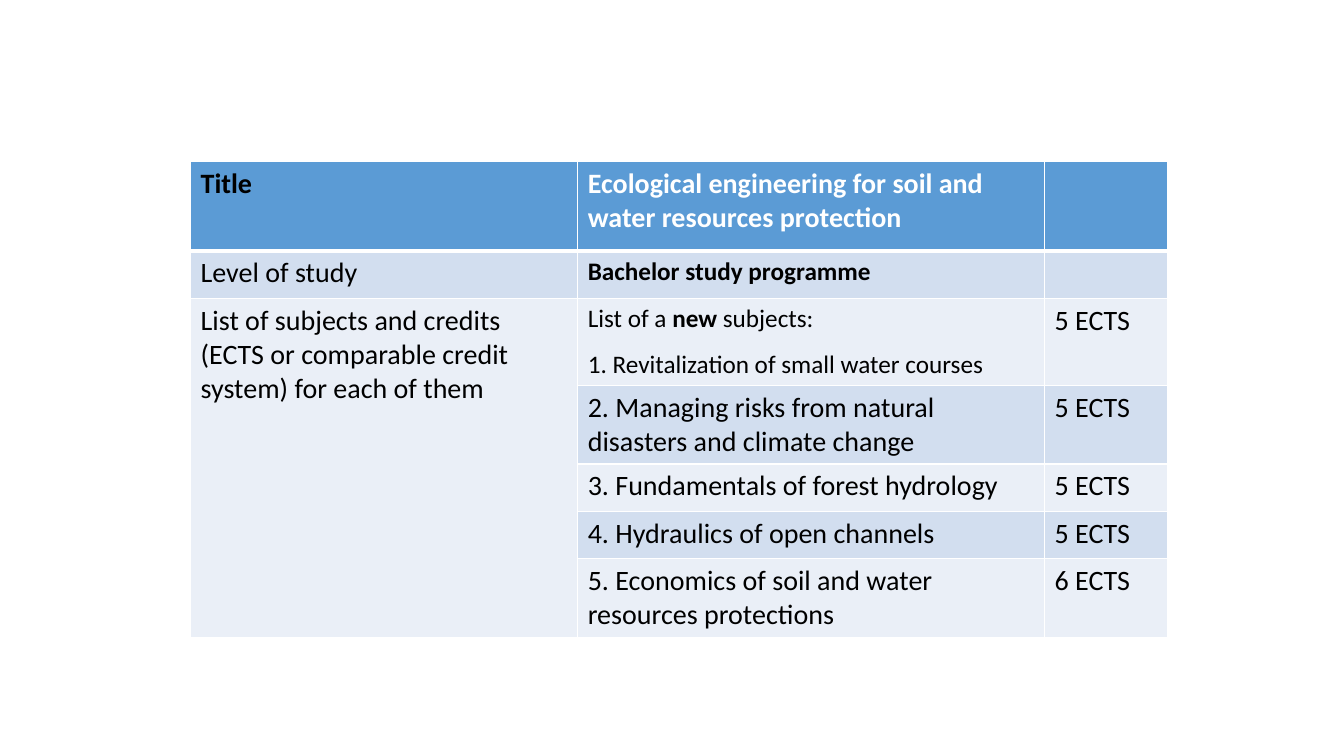
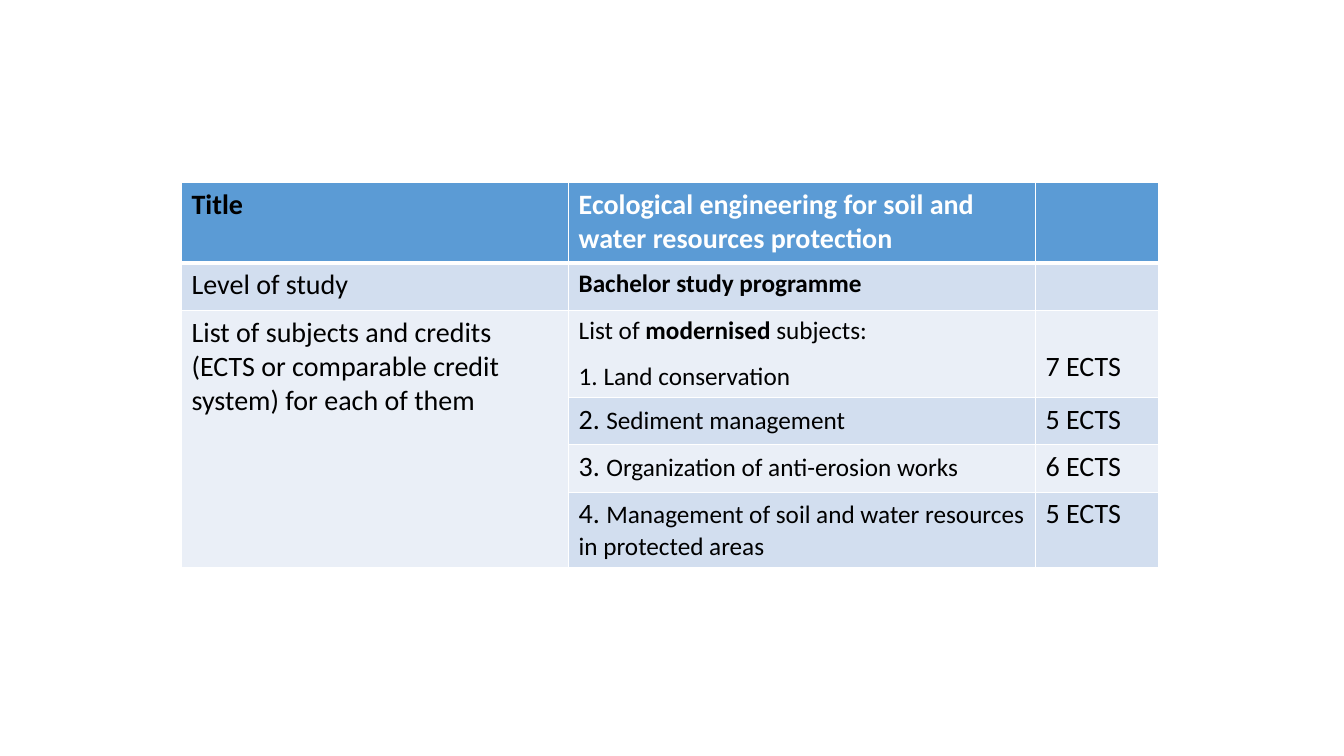
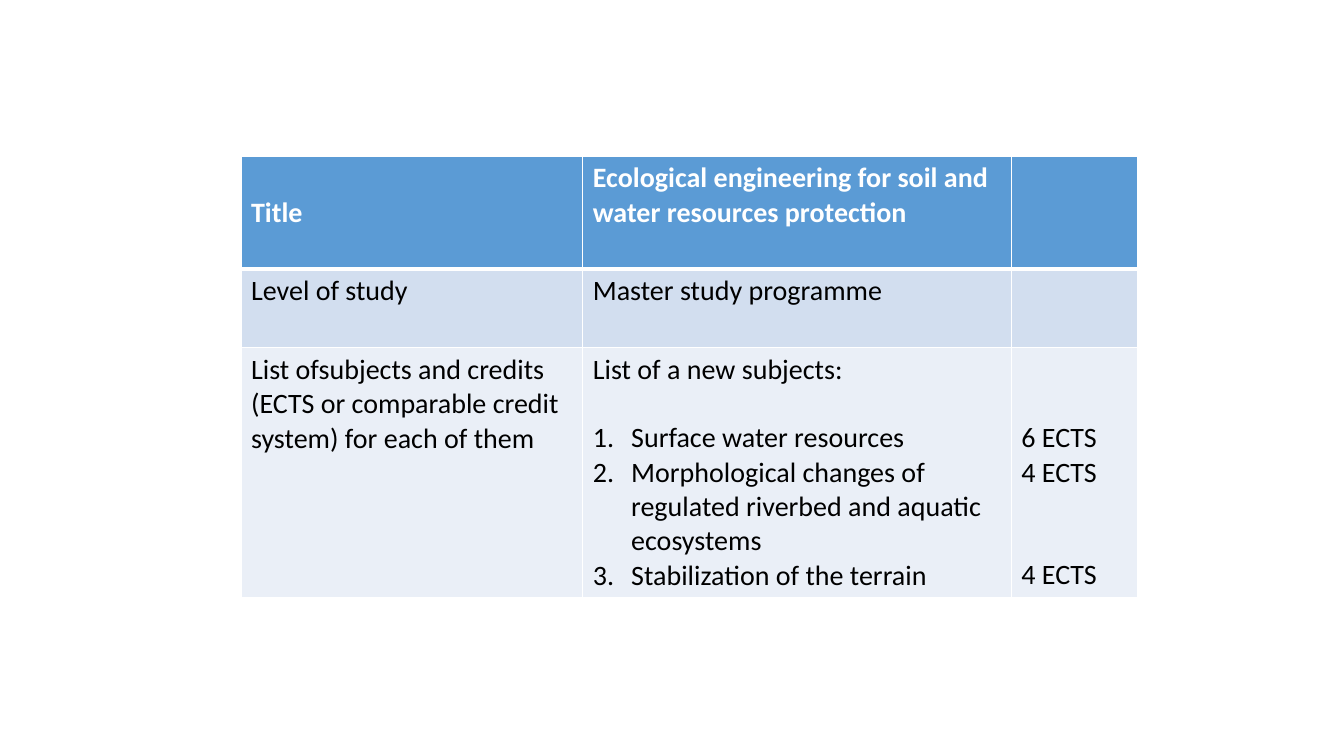
from dataclasses import dataclass
from lxml import etree
from pptx import Presentation
from pptx import util as u
from pptx.dml.color import RGBColor
from pptx.oxml import ns

BLACK = RGBColor(0x00, 0x00, 0x00)
WHITE = RGBColor(0xFF, 0xFF, 0xFF)
HEADER = RGBColor(0x5B, 0x9B, 0xD5)
BANDS = (RGBColor(0xEA, 0xEF, 0xF7), RGBColor(0xD2, 0xDE, 0xEF))

FONT = "Calibri"
BIG, SMALL = 20, 18
LINE = 1.22  # line height as a share of the text size
MARGIN = 0.05
INDENT = 0.38

COURSE = "Ecological engineering for soil and water resources protection"
SUBJECTS = "List of subjects and credits (ECTS or comparable credit system) for each of them"


@dataclass
class Run:
    text: str
    size: int = BIG
    bold: bool = False
    color: RGBColor = BLACK


@dataclass
class Para:
    runs: list
    before: float = 0
    numbered: bool = False


@dataclass
class Cell:
    """Paragraphs that start a number of lines below the top of the cell."""
    paras: list
    drop: int = 0


def plain(text, drop=0, **fmt):
    return Cell([Para([Run(text, **fmt)])], drop)


def ects(*credits, drop=0, gaps=()):
    """Credits, one a line; gaps holds the empty lines above each."""
    gaps = gaps or [0] * len(credits)
    return Cell([Para([Run(f"{n} ECTS")], before=gap * BIG * LINE)
                 for n, gap in zip(credits, gaps)], drop)


def intro(start, key, first_subject):
    """Heading with a bold key word, and the first subject below it."""
    heading = [Run(start, SMALL), Run(key, SMALL, True), Run(" subjects:", SMALL)]
    return Cell([Para(heading), Para([Run(first_subject, SMALL)], before=9 * LINE)])


def item(number, text):
    return Cell([Para([Run(f"{number}. "), Run(text, SMALL)])])


def header(title_color=BLACK, drop=0):
    return [plain("Title", drop, bold=True, color=title_color),
            plain(COURSE, bold=True, color=WHITE), None]


def write(cell, content):
    tf = cell.text_frame
    cell.margin_top = u.Inches(MARGIN + content.drop * BIG * LINE / 72)
    for i, para in enumerate(content.paras):
        p = tf.add_paragraph() if i else tf.paragraphs[0]
        if para.numbered:
            pPr = p._p.get_or_add_pPr()
            pPr.set("marL", str(u.Inches(INDENT)))
            pPr.set("indent", str(-u.Inches(INDENT)))
            etree.SubElement(pPr, ns.qn("a:buFont"), typeface="+mj-lt")
            etree.SubElement(pPr, ns.qn("a:buAutoNum"), type="arabicPeriod")
        if para.before:
            p.space_before = u.Pt(round(para.before, 1))
        for run in para.runs:
            r = p.add_run()
            r.text = run.text
            r.font.name, r.font.size = FONT, u.Pt(run.size)
            r.font.bold, r.font.color.rgb = run.bold, run.color


def style(cell, row):
    """White borders, thick below the header row, and banded fill."""
    tcPr = cell._tc.get_or_add_tcPr()
    widths = {"L": 1, "R": 1, "T": 3 if row == 1 else 1, "B": 3 if row == 0 else 1}
    for side, width in widths.items():
        ln = etree.SubElement(tcPr, ns.qn(f"a:ln{side}"), w=str(u.Pt(width)))
        fill = etree.SubElement(ln, ns.qn("a:solidFill"))
        etree.SubElement(fill, ns.qn("a:srgbClr"), val=str(WHITE))
    cell.fill.solid()
    cell.fill.fore_color.rgb = BANDS[row % 2] if row else HEADER


def add_table_slide(prs, left, top, cols, heights, rows):
    """Table slide; rows left without a first cell join the one above."""
    slide = prs.slides.add_slide(prs.slide_layouts[6])
    size = [u.Inches(v) for v in (left, top, sum(cols), sum(heights))]
    table = slide.shapes.add_table(len(rows), len(cols), *size).table
    table.horz_banding = False
    for column, width in zip(table.columns, cols):
        column.width = u.Inches(width)
    for i, (row, height) in enumerate(zip(rows, heights)):
        table.rows[i].height = u.Inches(height)
        for j, content in enumerate(row):
            cell = table.cell(i, j)
            style(cell, i)
            if content:
                write(cell, content)
    if len(rows) > 3:
        table.cell(2, 0).merge(table.cell(len(rows) - 1, 0))


def main():
    prs = Presentation()
    prs.slide_width, prs.slide_height = u.Inches(13.33), u.Inches(7.5)
    bachelor_cols = (3.84, 4.63, 1.22)
    bachelor = [plain("Level of study"),
                plain("Bachelor study programme", size=SMALL, bold=True), None]

    add_table_slide(prs, 1.89, 1.6, bachelor_cols,
                    (0.89, 0.47, 0.86, 0.78, 0.47, 0.47, 0.78), [
        header(),
        bachelor,
        [plain(SUBJECTS),
         intro("List of a ", "new", "1. Revitalization of small water courses"), ects(5)],
        [None, plain("2. Managing risks from natural disasters and climate change"), ects(5)],
        [None, plain("3. Fundamentals of forest hydrology"), ects(5)],
        [None, plain("4. Hydraulics of open channels"), ects(5)],
        [None, plain("5. Economics of soil and water resources protections"), ects(6)],
    ])

    add_table_slide(prs, 1.8, 1.81, bachelor_cols,
                    (0.8, 0.47, 0.86, 0.47, 0.47, 0.74), [
        header(),
        bachelor,
        [plain(SUBJECTS),
         intro("List of ", "modernised", "1. Land conservation"), ects(7, drop=1)],
        [None, item(2, "Sediment management"), ects(5)],
        [None, item(3, "Organization of anti-erosion works"), ects(6)],
        [None, item(4, "Management of soil and water resources in protected areas"), ects(5)],
    ])

    master_subjects = ("Surface water resources",
                       "Morphological changes of regulated riverbed and aquatic ecosystems",
                       "Stabilization of the terrain")
    master_list = [Para([Run("List of a new subjects:")])]
    master_list += [Para([Run(name)], before=0 if i else BIG * LINE, numbered=True)
                    for i, name in enumerate(master_subjects)]
    add_table_slide(prs, 2.39, 1.55, (3.39, 4.25, 1.25), (1.12, 0.78, 2.48), [
        header(WHITE, drop=1),
        [plain("Level of study"), plain("Master study programme"), None],
        [plain(SUBJECTS.replace("of subjects", "ofsubjects")), Cell(master_list),
         ects(6, 4, 4, drop=2, gaps=(0, 0, 2))],
    ])
    prs.save("out.pptx")


if __name__ == "__main__":
    main()
